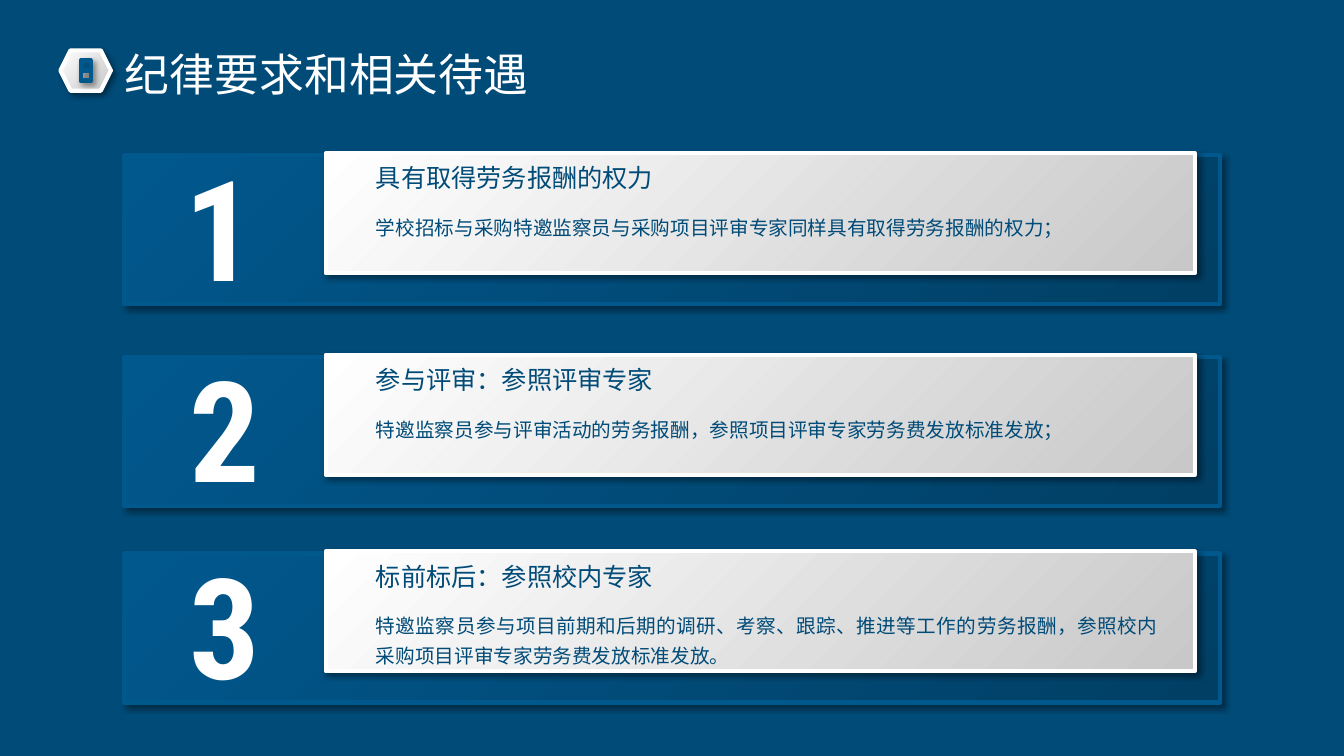
from math import cos, radians, sin

from lxml.etree import SubElement
from pptx import Presentation
from pptx.dml.color import RGBColor
from pptx.enum.shapes import MSO_SHAPE as Preset
from pptx.enum.text import MSO_AUTO_SIZE as AutoSize, PP_ALIGN as Align
from pptx.oxml.ns import qn
from pptx.util import Inches, Pt

NAVY = RGBColor(0x01, 0x4B, 0x78)
BLUE = RGBColor(0x01, 0x58, 0x8D)
DEEP = RGBColor(0x01, 0x3F, 0x65)
WHITE = RGBColor(0xFF, 0xFF, 0xFF)
SILVER = RGBColor(0xC8, 0xC8, 0xC8)
SANS = "Noto Sans CJK SC"
CELL = Inches(0.1)


def raise_plate(shape, light, dark):
    shape.fill.gradient()
    shape.fill.gradient_angle = 315
    for stop, color in zip(shape.fill.gradient_stops, (light, dark)):
        stop.color.rgb = color
    shape.line.color.rgb = light
    shape.line.width = Pt(3)
    shape.shadow.inherit = False
    effects = shape._element.spPr.find(qn("a:effectLst"))
    outer = SubElement(effects, qn("a:outerShdw"), blurRad=str(Pt(4)), dist=str(Pt(3)),
                       dir="2700000", algn="tl", rotWithShape="0")
    black = SubElement(outer, qn("a:srgbClr"), val="000000")
    SubElement(black, qn("a:alpha"), val="40000")


def write(column, row, columns, rows, text, size, font, color, align=Align.LEFT, spacing=None, bold=None):
    box = slide.shapes.add_textbox(*(int(n * CELL) for n in (column, row, columns, rows)))
    frame = box.text_frame
    frame.word_wrap = True
    frame.auto_size = AutoSize.SHAPE_TO_FIT_TEXT
    frame.text = text
    paragraph = frame.paragraphs[0]
    paragraph.alignment = align
    paragraph.line_spacing = spacing
    run = paragraph.runs[0]
    run.font.size = Pt(size)
    run.font.name = font
    run.font.bold = bold
    run.font.color.rgb = color
    SubElement(run.font._element, qn("a:ea"), typeface=font)


deck = Presentation()
deck.slide_width = Inches(13.33)
deck.slide_height = Inches(7.5)
slide = deck.slides.add_slide(deck.slide_layouts[6])
slide.background.fill.solid()
slide.background.fill.fore_color.rgb = NAVY

corners = [(5.95, 7.2), (7.15, 5.1), (9.75, 5.1), (10.9, 7.2), (9.75, 9.3), (7.15, 9.3)]
badge_outline = []
for i, (x, y) in enumerate(corners):
    (x0, y0), (x1, y1) = corners[i - 1], corners[(i + 1) % 6]
    for t in (0, 0.25, 0.5, 0.75, 1):
        before, after = 0.12 * (1 - t) ** 2, 0.12 * t ** 2
        badge_outline.append((x + before * (x0 - x) + after * (x1 - x),
                              y + before * (y0 - y) + after * (y1 - y)))

lens_rim = [(8.25 + 0.75 * cos(radians(a)), 7.05 + 0.75 * sin(radians(a))) for a in range(55, 396, 10)]
lens_hole = [(8.25 + 0.5 * cos(radians(a)), 7.05 + 0.5 * sin(radians(a))) for a in range(360, 0, -15)]
handle = [(9, 7.6), (9.1, 7.6), (9.4, 7.9), (9.4, 8), (9.2, 8.15), (9.1, 8.1), (8.85, 7.85), (8.9, 7.75)]

for contours, light, dark in (([badge_outline], WHITE, SILVER), ([lens_rim + handle, lens_hole], BLUE, DEEP)):
    builder = slide.shapes.build_freeform(*contours[0][0], scale=CELL)
    builder.add_line_segments(contours[0][1:])
    for hole in contours[1:]:
        builder.move_to(*hole[0])
        builder.add_line_segments(hole[1:])
    raise_plate(builder.convert_to_shape(), light, dark)

write(11.4, 4.1, 43.2, 6.4, "纪律要求和相关待遇", 32, "Noto Sans CJK JP", WHITE)

rules = [
    (15.4, 13.3, "具有取得劳务报酬的权力",
     "学校招标与采购特邀监察员与采购项目评审专家同样具有取得劳务报酬的权力；"),
    (35.4, 13.8, "参与评审：参照评审专家",
     "特邀监察员参与评审活动的劳务报酬，参照项目评审专家劳务费发放标准发放；"),
    (54.9, 13.8, "标前标后：参照校内专家",
     "特邀监察员参与项目前期和后期的调研、考察、跟踪、推进等工作的劳务报酬，"
     "参照校内采购项目评审专家劳务费发放标准发放。"),
]
for number, (top, numeral_column, heading, detail) in enumerate(rules, 1):
    for column, row, columns, rows, light, dark in (
        (12.3, top, 108.7, 14.8, BLUE, DEEP),
        (32.3, top - 0.2, 86.2, 11.9, WHITE, SILVER),
    ):
        plate = slide.shapes.add_shape(Preset.RECTANGLE, *(int(n * CELL) for n in (column, row, columns, rows)))
        raise_plate(plate, light, dark)
    write(numeral_column, top - 1.9, 17.1, 17.8, str(number), 100, "Roboto Condensed", WHITE, Align.CENTER, bold=True)
    write(36.3, top + 4.95, 79.5, 4, detail, 14, SANS, NAVY, Align.JUSTIFY, 1.25)
    write(36.3, top + 0.25, 36.4, 4, heading, 18, SANS, NAVY)

deck.save("out.pptx")
